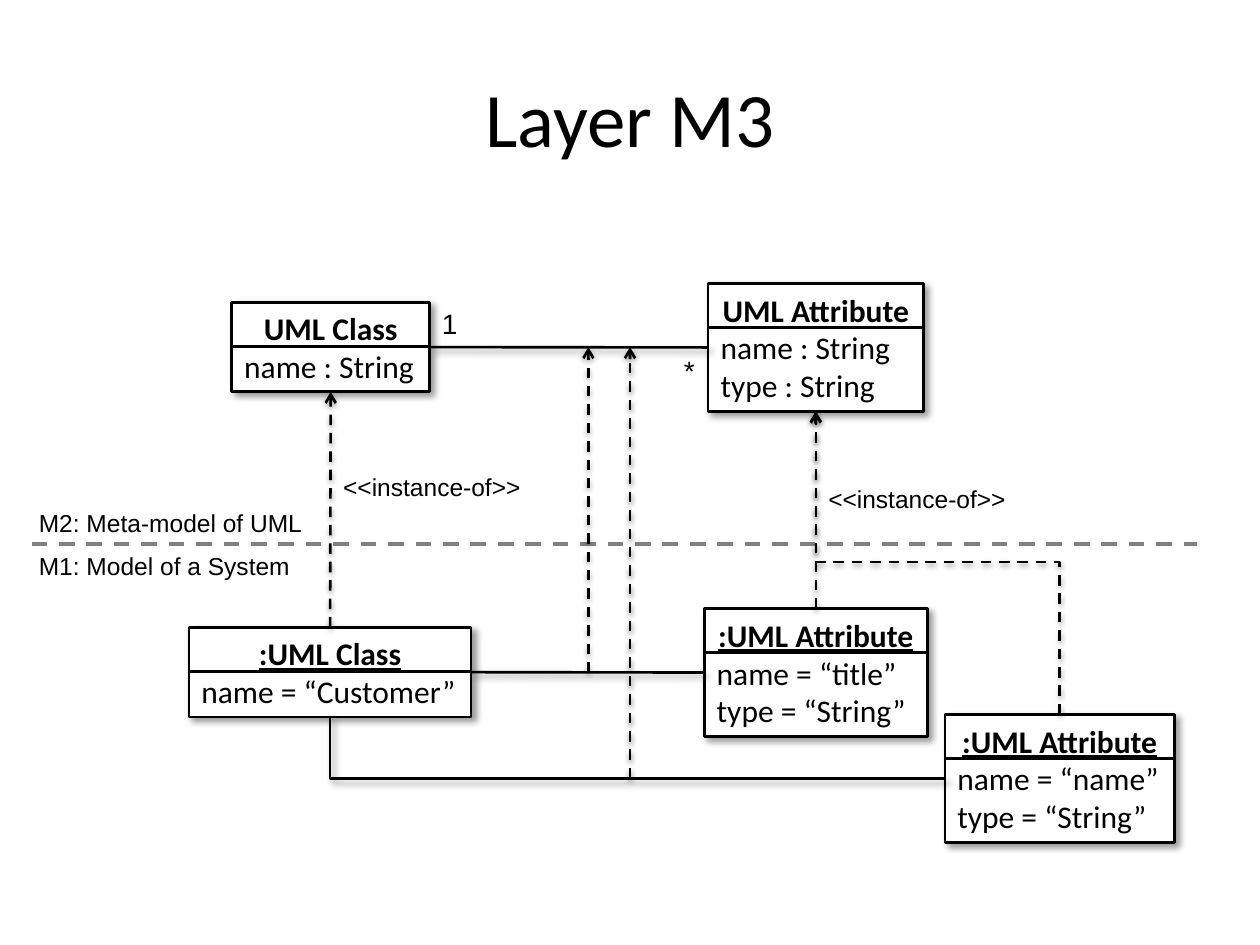
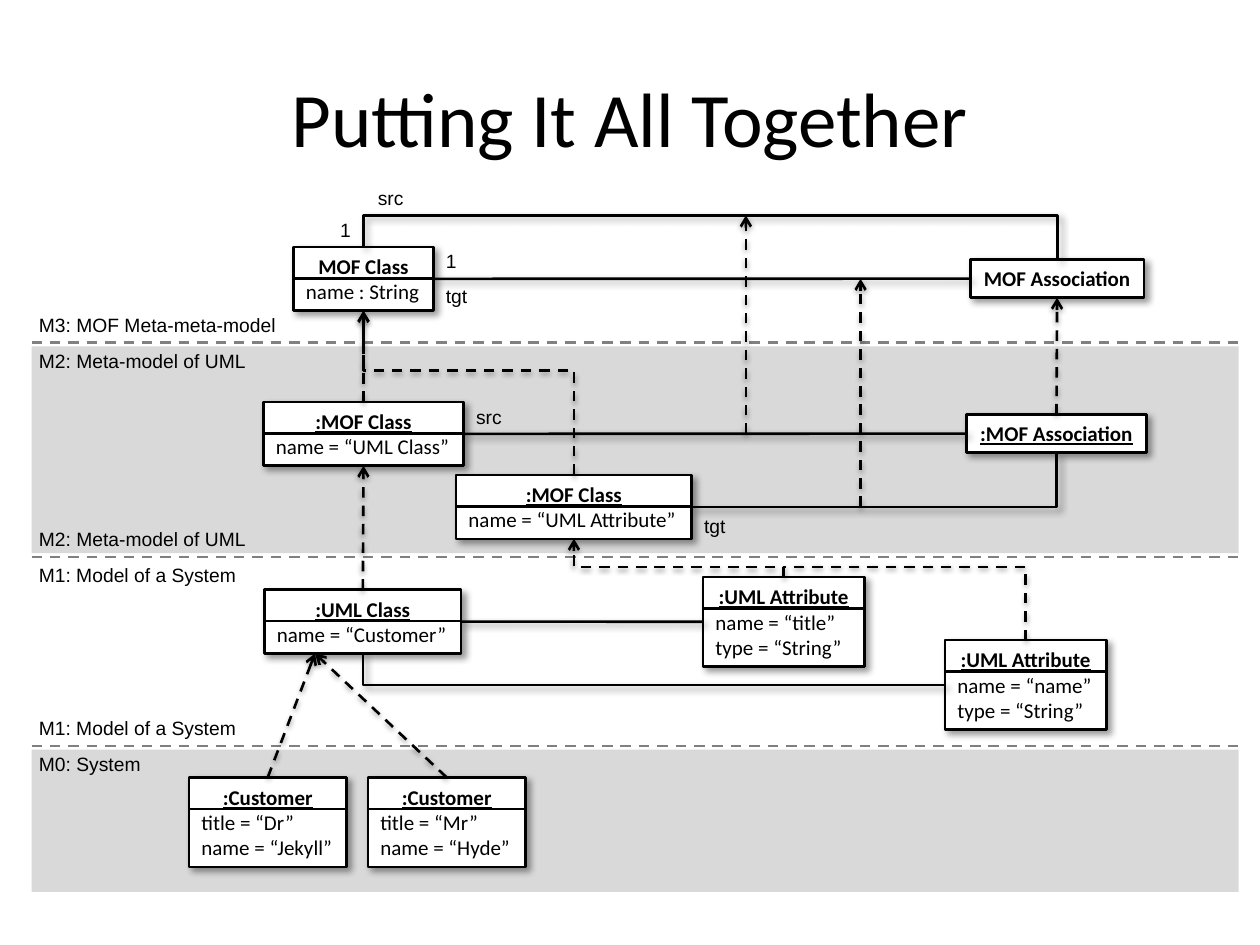
import dataclasses

import lxml.etree
import pptx
import pptx.dml.color
import pptx.enum.dml
import pptx.enum.shapes
import pptx.enum.text
import pptx.oxml.ns
import pptx.util

# The grid has 100 columns and 75 rows.
WIDTH, HEIGHT = pptx.util.Inches(10), pptx.util.Inches(7.5)
COLUMN, ROW = WIDTH / 100, HEIGHT / 75
POINTS_PER_ROW = 7.2

BLACK, WHITE, GRAY, BAND = "000000", "FFFFFF", "808080", "D9D9D9"
HEADING_FONT, LABEL_FONT = "Calibri", "Arial"
TITLE_ONLY = 5


@dataclasses.dataclass
class Box:
    left: float
    top: float
    width: float
    height: float

    @property
    def right(self):
        return self.left + self.width

    @property
    def bottom(self):
        return self.top + self.height

    @property
    def center(self):
        return self.left + self.width / 2

    @property
    def middle(self):
        return self.top + self.height / 2

    def inner(self, column, row, width, height):
        return Box(self.left + column, self.top + row, width, height)

    def emu(self):
        return (round(self.left * COLUMN), round(self.top * ROW),
                round(self.width * COLUMN), round(self.height * ROW))


@dataclasses.dataclass
class Shadow:
    alpha: int
    blur: float
    distance: float
    angle: int


@dataclasses.dataclass
class LineStyle:
    color: str = BLACK
    weight: float = 1.5
    dashed: bool = False
    arrow: bool = False
    shadow: Shadow = None


BOX_SHADOW = Shadow(40, 4, 3, 45)
ARROW_SHADOW = Shadow(38, 3.1, 1.6, 90)
DIVIDER = LineStyle()
ASSOCIATION = LineStyle(shadow=BOX_SHADOW)
INSTANCE = LineStyle(dashed=True, arrow=True, shadow=ARROW_SHADOW)
INSTANCE_BRANCH = LineStyle(dashed=True, shadow=ARROW_SHADOW)
WIDE_BOUNDARY = LineStyle(GRAY, 2.25, dashed=True)
BOUNDARY = LineStyle(GRAY, dashed=True)


def rgb(color):
    return pptx.dml.color.RGBColor.from_string(color)


def child(parent, tag, **attributes):
    node = lxml.etree.SubElement(parent, pptx.oxml.ns.qn(tag))
    for name, value in attributes.items():
        node.set(name, str(value))
    return node


def set_shadow(shape, shadow):
    """Replace the theme shadow by the given one, or by none."""
    properties = shape.element.spPr
    effects = properties.find(pptx.oxml.ns.qn("a:effectLst"))
    if effects is None:
        effects = child(properties, "a:effectLst")
    if shadow:
        outer = child(effects, "a:outerShdw", blurRad=pptx.util.Pt(shadow.blur),
                      dist=pptx.util.Pt(shadow.distance), dir=shadow.angle * 60000,
                      algn="tl", rotWithShape=0)
        color = child(outer, "a:srgbClr", val=BLACK)
        child(color, "a:alpha", val=shadow.alpha * 1000)


def format_font(para, size, font, bold=False, underline=False):
    for span in para.runs:
        span.font.size = pptx.util.Pt(size)
        span.font.name = font
        span.font.color.rgb = rgb(BLACK)
        span.font.bold = bold
        span.font.underline = underline


def fit_text(frame):
    frame.word_wrap = False
    frame.auto_size = pptx.enum.text.MSO_AUTO_SIZE.SHAPE_TO_FIT_TEXT


def text_height(lines, size):
    return 1 + lines * size * 1.22 / POINTS_PER_ROW


def add_page(deck, title):
    page = deck.slides.add_slide(deck.slide_layouts[TITLE_ONLY])
    holder = page.shapes.title
    holder.left, holder.top, holder.width, holder.height = Box(5, 3, 90, 12.5).emu()
    holder.text_frame.text = title
    holder.text_frame.vertical_anchor = pptx.enum.text.MSO_ANCHOR.MIDDLE
    para = holder.text_frame.paragraphs[0]
    para.alignment = pptx.enum.text.PP_ALIGN.CENTER
    format_font(para, 44, HEADING_FONT)
    return page


def add_label(page, text, left, top, width, size):
    label = page.shapes.add_textbox(*Box(left, top, width, text_height(1, size)).emu())
    label.text_frame.text = text
    fit_text(label.text_frame)
    format_font(label.text_frame.paragraphs[0], size, LABEL_FONT)


def style_line(connector, style):
    connector.line.color.rgb = rgb(style.color)
    connector.line.width = pptx.util.Pt(style.weight)
    if style.dashed:
        connector.line.dash_style = pptx.enum.dml.MSO_LINE.DASH
    if style.arrow:
        line = connector.element.spPr.find(pptx.oxml.ns.qn("a:ln"))
        child(line, "a:tailEnd", type="arrow")
    set_shadow(connector, style.shadow)


def add_line(page, start, end, style):
    ends = [round(value * unit) for point in (start, end)
            for value, unit in zip(point, (COLUMN, ROW))]
    kind = pptx.enum.shapes.MSO_CONNECTOR.STRAIGHT
    style_line(page.shapes.add_connector(kind, *ends), style)


def add_elbow(page, start, end, turn, style):
    """Leave start vertically, run across on row turn, then reach end."""
    across, down = end[0] - start[0], end[1] - start[1]
    length, breadth = abs(down), abs(across)
    left, top, width, height = Box((start[0] + end[0] - length) / 2,
                                   (start[1] + end[1] - breadth) / 2,
                                   length, breadth).emu()
    connector = page.shapes.add_connector(pptx.enum.shapes.MSO_CONNECTOR.ELBOW,
                                          left, top, left + width, top + height)
    properties = connector.element.spPr
    frame = properties.find(pptx.oxml.ns.qn("a:xfrm"))
    frame.set("rot", str(270 * 60000))
    frame.set("flipH", str(int(down > 0)))
    frame.set("flipV", str(int(across < 0)))
    geometry = properties.find(pptx.oxml.ns.qn("a:prstGeom"))
    if turn == end[1]:
        geometry.set("prst", "bentConnector2")
    else:
        guides = geometry.find(pptx.oxml.ns.qn("a:avLst"))
        share = round((turn - start[1]) / down * 100000)
        child(guides, "a:gd", name="adj1", fmla=f"val {share}")
    style_line(connector, style)


def add_rectangle(page, box, fill):
    kind = pptx.enum.shapes.MSO_SHAPE.RECTANGLE
    shape = page.shapes.add_shape(kind, *box.emu())
    shape.shadow.inherit = False
    shape.fill.solid()
    shape.fill.fore_color.rgb = rgb(fill)
    shape.line.fill.background()
    return shape


def add_class(page, layer, column, row, width, size, name, *fields):
    """Place a UML class in a layer; instances, named with a colon, are underlined."""
    box = layer.inner(column, row, width, text_height(1 + len(fields), size))
    shape = add_rectangle(page, box, WHITE)
    shape.line.color.rgb = rgb(BLACK)
    shape.line.width = pptx.util.Pt(1.5)
    set_shadow(shape, BOX_SHADOW)
    frame = shape.text_frame
    frame.text = "\n".join((name, *fields))
    fit_text(frame)
    for para in frame.paragraphs:
        para.alignment = pptx.enum.text.PP_ALIGN.LEFT
        format_font(para, size, HEADING_FONT)
    heading = frame.paragraphs[0]
    heading.alignment = pptx.enum.text.PP_ALIGN.CENTER
    format_font(heading, size, HEADING_FONT, True, name.startswith(":"))
    if fields:
        row = box.top + 0.5 + size * 1.2 / POINTS_PER_ROW
        add_line(page, (box.left, row), (box.right, row), DIVIDER)
    return box


def add_layer(page, box, size, boundary, above=None, below=None, shaded=False):
    """Draw a layer: captions (text, width) at its top and bottom, a line under it."""
    if shaded:
        add_rectangle(page, box.inner(0, 0.3, 95.8, box.height - 0.6), BAND)
    if boundary:
        add_line(page, (box.left, box.bottom), (box.right, box.bottom), boundary)
    rows = (box.top, box.bottom - text_height(1, size))
    for caption, row in zip((above, below), rows):
        if caption:
            text, width = caption
            add_label(page, text, box.left - 0.4, row, width, size)


def associate(page, left_class, right_class):
    add_line(page, (left_class.right, left_class.middle),
             (right_class.left, right_class.middle), ASSOCIATION)


def associate_below(page, upper_class, side_class):
    add_elbow(page, (upper_class.center, upper_class.bottom),
              (side_class.left, side_class.middle), side_class.middle, ASSOCIATION)


def instance_of(page, lower, upper, turn=None):
    start, end = (lower.center, lower.top), (upper.center, upper.bottom)
    if turn:
        add_elbow(page, start, end, turn, INSTANCE)
    else:
        add_line(page, start, end, INSTANCE)


def build_layer_page(deck):
    page = add_page(deck, "Layer M3")
    meta, model = Box(2.5, 20, 92.5, 23.2), Box(2.5, 43.2, 92.5, 25)
    add_layer(page, meta, 14, WIDE_BOUNDARY, below=("M2: Meta-model of UML", 23))
    add_layer(page, model, 14, None, above=("M1: Model of a System", 22))

    uml_class = add_class(page, meta, 15.9, 4, 15.7, 18, "UML Class", "name : String")
    attribute = add_class(page, meta, 53.7, 2.5, 17.1, 18, "UML Attribute",
                          "name : String", "type : String")
    customer = add_class(page, model, 12.5, 6.6, 22.4, 18, ":UML Class", "name = “Customer”")
    title = add_class(page, model, 53.4, 5.1, 17.7, 18, ":UML Attribute",
                      "name = “title”", "type = “String”")
    name = add_class(page, model, 72.5, 13.5, 18.2, 18, ":UML Attribute",
                     "name = “name”", "type = “String”")

    associate(page, uml_class, attribute)
    associate(page, customer, title)
    associate_below(page, customer, name)
    instance_of(page, customer, uml_class)
    instance_of(page, title, attribute)
    instance_of(page, name, attribute, turn=44.6)
    for column, row in ((46.7, title.middle), (50, name.middle)):
        add_line(page, (column, row), (column, uml_class.middle), INSTANCE)
    add_label(page, "1", uml_class.right, 23.8, 3.3, 16)
    add_label(page, "*", attribute.left - 2.9, attribute.middle, 2.9, 16)
    add_label(page, "<<instance-of>>", uml_class.center, 37, 16.1, 14)
    add_label(page, "<<instance-of>>", attribute.center, 37.9, 16.1, 14)


def build_overview_page(deck):
    page = add_page(deck, "Putting It All Together")
    edges = (15, 27.2, 44.2, 59.2, 71.1)
    mof, meta, model, system = (Box(2.5, top, 96.1, bottom - top)
                                for top, bottom in zip(edges, edges[1:]))
    meta_caption = ("M2: Meta-model of UML", 18.5)
    model_caption = ("M1: Model of a System", 17.7)
    add_layer(page, mof, 11, BOUNDARY, below=("M3: MOF Meta-meta-model", 20.9))
    add_layer(page, meta, 11, BOUNDARY, meta_caption, meta_caption, shaded=True)
    add_layer(page, model, 11, BOUNDARY, model_caption, model_caption)
    add_layer(page, system, 11, None, above=("M0: System", 10.1), shaded=True)

    mof_class = add_class(page, mof, 20.8, 4.6, 11.1, 12, "MOF Class", "name : String")
    association = add_class(page, mof, 74.5, 5.6, 13.8, 12, "MOF Association")
    uml_class = add_class(page, meta, 18.4, 4.7, 15.9, 12, ":MOF Class", "name = “UML Class”")
    attribute = add_class(page, meta, 33.7, 10.5, 18.7, 12, ":MOF Class",
                          "name = “UML Attribute”")
    uml_link = add_class(page, meta, 74.2, 5.7, 14.3, 12, ":MOF Association")
    customer = add_class(page, model, 18.5, 2.6, 15.6, 12, ":UML Class", "name = “Customer”")
    title = add_class(page, model, 53.3, 1.6, 12.8, 12, ":UML Attribute",
                      "name = “title”", "type = “String”")
    name = add_class(page, model, 72.5, 6.6, 12.8, 12, ":UML Attribute",
                     "name = “name”", "type = “String”")
    people = [add_class(page, system, column, 2.5, 12.5, 12, ":Customer", *fields)
              for column, fields in ((12.5, ("title = “Dr”", "name = “Jekyll”")),
                                     (26.7, ("title = “Mr”", "name = “Hyde”")))]

    for pair in ((mof_class, association), (uml_class, uml_link), (customer, title)):
        associate(page, *pair)
    source_row, attribute_row = 17.1, 45
    add_elbow(page, (mof_class.center, mof_class.top),
              (association.center, association.top), source_row, ASSOCIATION)
    add_elbow(page, (uml_link.center, uml_link.bottom),
              (attribute.right, attribute.middle), attribute.middle, ASSOCIATION)
    associate_below(page, customer, name)

    for pair in ((uml_class, mof_class), (uml_link, association), (customer, uml_class)):
        instance_of(page, *pair)
    instance_of(page, attribute, mof_class, turn=29.4)
    instance_of(page, title, attribute, turn=attribute_row)
    add_elbow(page, (name.center, name.top), (title.center, attribute_row),
              attribute_row, INSTANCE_BRANCH)
    add_line(page, (59.2, uml_class.middle), (59.2, source_row), INSTANCE)
    add_line(page, (68.3, attribute.middle), (68.3, mof_class.middle), INSTANCE)
    for person in people:
        add_line(page, (person.center, person.top), (25, customer.bottom), INSTANCE)

    for text, left, top, width in (("src", 29, 14.3, 4.1), ("1", 26, 16.8, 2.9),
                                   ("1", mof_class.right, 19.3, 2.9),
                                   ("tgt", mof_class.right, 22.1, 3.7),
                                   ("src", uml_class.right, 31.7, 4.1),
                                   ("tgt", attribute.right, 40.3, 3.7)):
        add_label(page, text, left, top, width, 11)


def main():
    deck = pptx.Presentation()
    deck.slide_width, deck.slide_height = WIDTH, HEIGHT
    build_layer_page(deck)
    build_overview_page(deck)
    deck.save("out.pptx")


if __name__ == "__main__":
    main()
